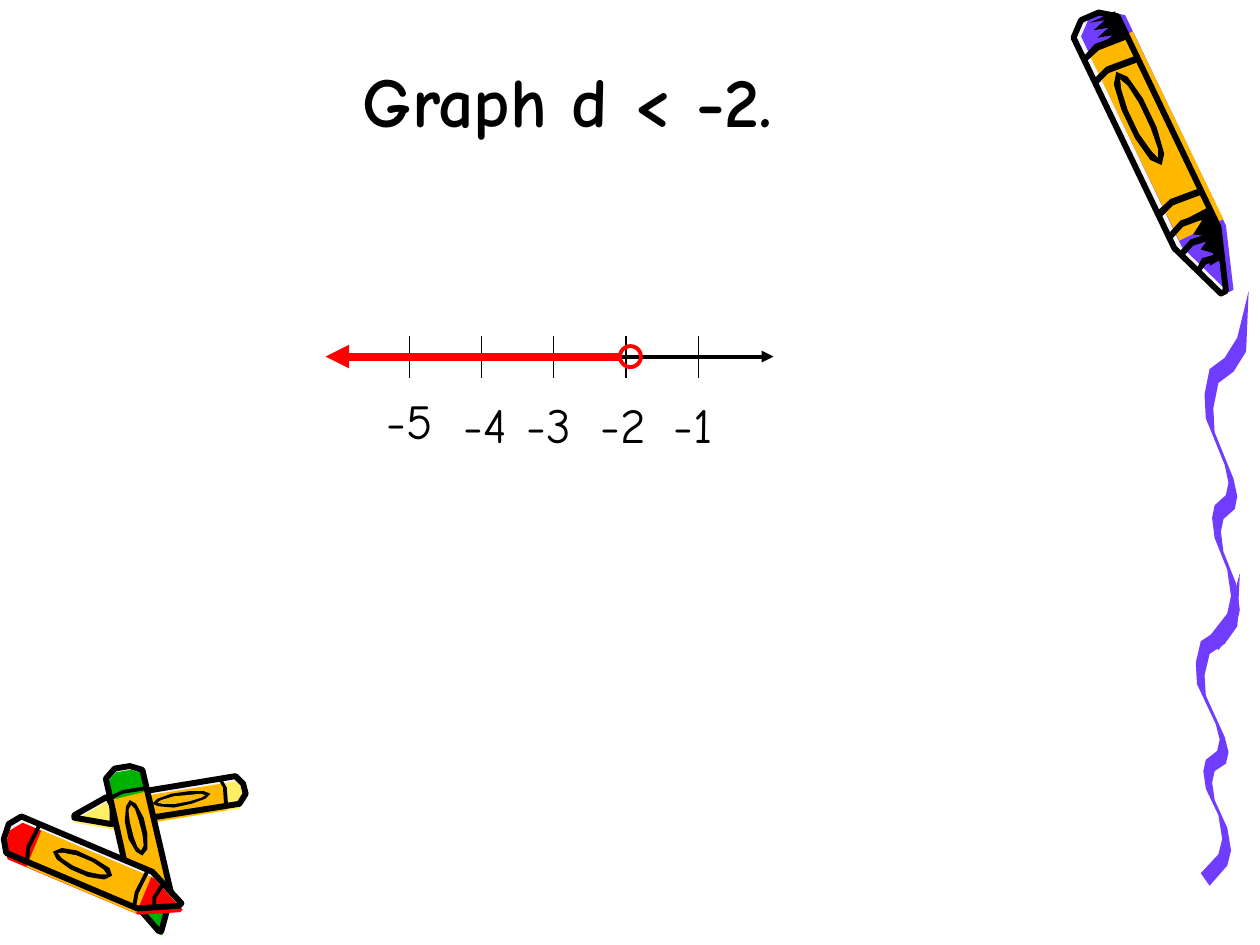
import dataclasses
import math
import pptx
import pptx.util
import pptx.dml.color
import pptx.enum.shapes
import pptx.enum.text
import pptx.oxml.ns

Pt = pptx.util.Pt
FONT = "Comic Neue"
DRAWING_UNIT = Pt(0.72)
AXIS_Y = 203.76
FIRST_TICK_X, TICK_GAP = 234, 41.25
SHOULDER = 0.8
COLORS = {
    "black": "000000", "purple": "703DFF", "orange": "FFB800", "paper": "F8F8F8",
    "yellow": "FFEF66", "red": "FF0000", "green": "00B200",
}
TICK_LABELS = [
    ("-5", 213.84, 219.6, 44), ("-4", 257.76, 221.76, 44), ("-3", 293.76, 221.76, 47),
    ("-2", 336.24, 221.76, 60), ("-1", 378, 221.76, 48),
]
SQUIGGLE_STROKE = [
    (4, 274), (18, 256), (21, 242), (18, 221), (8, 196), (6, 180), (8, 170), (17, 162),
    (19, 152), (16, 138), (1, 101), (0, 82), (4, 62), (16, 53), (26, 37), (35, 0),
]
SQUIGGLE_NIB = (7, 11)


@dataclasses.dataclass
class Crayon:
    color: str
    back: tuple
    tip: tuple
    width: float
    fill_shift: tuple
    wrapper_start: float
    bands: tuple
    ring_center: float = 0.37
    shading: tuple = ()

    def locate(self, points, shift=(0, 0)):
        run, rise = self.tip[0] - self.back[0], self.tip[1] - self.back[1]
        length = math.hypot(run, rise)
        placed = []
        for along, across in points:
            side = across * self.width / length
            placed.append((round(self.back[0] + along * run + side * rise + shift[0]),
                           round(self.back[1] + along * rise - side * run + shift[1])))
        return placed


CRAYONS = [
    Crayon("yellow", (194, 626), (59, 648), 22, (0, 4), 0.12, (0.12, 0.79)),
    Crayon("green", (97, 609), (127, 739), 30, (1, 3), 0.15, (0.15,)),
    Crayon("red", (5, 660), (143, 718), 31, (1, 5), 0.15, (0.15, 0.77, 0.87), ring_center=0.44),
    Crayon("purple", (865, 13), (971, 232), 39, (6, -1), 0.1, (0.11, 0.19, 0.67, 0.75, 0.82, 0.89),
           shading=((0.02, 0.1), (0.73, 0.9))),
]


def rgb(color):
    return pptx.dml.color.RGBColor.from_string(COLORS[color])


def style_text(frame, size, bold=False):
    for run in frame.paragraphs[0].runs:
        run.font.name = FONT
        run.font.size = Pt(size)
        run.font.bold = bold
        run.font.color.rgb = rgb("black")


def add_outline(slide, points, fill=None, stroke=0):
    builder = slide.shapes.build_freeform(*points[0], scale=DRAWING_UNIT)
    builder.add_line_segments(points[1:], close=True)
    outline = builder.convert_to_shape()
    outline.shadow.inherit = False
    if fill:
        outline.fill.solid()
        outline.fill.fore_color.rgb = rgb(fill)
    else:
        outline.fill.background()
    if stroke:
        outline.line.color.rgb = rgb("black")
        outline.line.width = Pt(stroke)
    else:
        outline.line.fill.background()


def half_width(along):
    return 0.5 * min(1, (1 - along) / (1 - SHOULDER))


def mirrored(half):
    return half + [(along, -across) for along, across in reversed(half)]


def band_shape(along, thickness=0.022):
    half = half_width(along)
    bow = [(along, -half), (along - 0.02, -0.3 * half), (along - 0.01, half)]
    return bow + [(place + thickness, across) for place, across in reversed(bow)]


def ring_shape(center, half_length, half_height):
    angles = [math.tau * step / 10 for step in range(10)]
    return [(center + half_length * math.cos(angle), half_height * math.sin(angle))
            for angle in angles]


def shading_shape(start, end, teeth=6):
    places = [start + (end - start) * step / teeth for step in range(teeth + 1)]
    edge = [(place, half_width(place)) for place in places]
    zigzag = [(place, half_width(place) * (0.5 if step % 2 else -0.1))
              for step, place in enumerate(places)]
    return edge + zigzag[::-1]


def add_crayon(slide, crayon):
    silhouette = mirrored([(0, 0.2), (0.04, 0.5), (SHOULDER, 0.5), (1, 0.05)])
    wrapper = mirrored([(crayon.wrapper_start, 0.5), (0.78, 0.5)])
    add_outline(slide, crayon.locate(silhouette), "paper")
    add_outline(slide, crayon.locate(silhouette, crayon.fill_shift), crayon.color)
    add_outline(slide, crayon.locate(wrapper, crayon.fill_shift), "orange")
    add_outline(slide, crayon.locate(silhouette), stroke=3.4)
    for along in crayon.bands:
        add_outline(slide, crayon.locate(band_shape(along)), "black")
    for start, end in crayon.shading:
        add_outline(slide, crayon.locate(shading_shape(start, end)), "black")
    add_outline(slide, crayon.locate(ring_shape(crayon.ring_center, 0.17, 0.26)), "black")
    add_outline(slide, crayon.locate(ring_shape(crayon.ring_center, 0.14, 0.13)), "orange")


def add_squiggle(slide, left, top, stretch):
    nib_x, nib_y = SQUIGGLE_NIB
    near_edge = SQUIGGLE_STROKE
    far_edge = [(x + nib_x, y + nib_y) for x, y in near_edge[-2::-1]]
    add_outline(slide, [(left + x, round(top + y * stretch)) for x, y in near_edge + far_edge],
                "purple")


def add_line(slide, start, end, color, width, arrows=()):
    line = slide.shapes.add_connector(
        pptx.enum.shapes.MSO_CONNECTOR.STRAIGHT, *map(Pt, start + end))
    line.line.color.rgb = rgb(color)
    line.line.width = Pt(width)
    qn = pptx.oxml.ns.qn
    properties = line._element.spPr
    stroke = properties.find(qn("a:ln"))
    for arrow in arrows:
        stroke.append(stroke.makeelement(qn(arrow), {"type": "triangle"}))
    properties.append(properties.makeelement(qn("a:effectLst"), {}))


def add_title(slide, wording):
    title = slide.shapes.title
    title.left, title.top, title.width, title.height = map(Pt, (54, 30.24, 540.72, 54))
    frame = title.text_frame
    frame.text = wording
    frame.word_wrap = True
    frame.auto_size = pptx.enum.text.MSO_AUTO_SIZE.NONE
    frame.vertical_anchor = pptx.enum.text.MSO_ANCHOR.BOTTOM
    frame.paragraphs[0].alignment = pptx.enum.text.PP_ALIGN.CENTER
    style_text(frame, 40, bold=True)


def add_tick_label(slide, wording, left, top, width):
    label = slide.shapes.add_textbox(*map(Pt, (left, top, width, 41)))
    label.text_frame.text = wording
    label.text_frame.word_wrap = True
    style_text(label.text_frame, 28)


def add_open_circle(slide, left, top, diameter):
    circle = slide.shapes.add_shape(
        pptx.enum.shapes.MSO_SHAPE.OVAL, *map(Pt, (left, top, diameter, diameter)))
    circle.shadow.inherit = False
    circle.fill.background()
    circle.line.color.rgb = rgb("red")
    circle.line.width = Pt(2.25)


def add_number_line(slide):
    add_line(slide, (190, AXIS_Y), (442, AXIS_Y), "black", 2.25, ("a:headEnd", "a:tailEnd"))
    for index, label in enumerate(TICK_LABELS):
        tick_x = FIRST_TICK_X + TICK_GAP * index
        add_line(slide, (tick_x, 192), (tick_x, 216), "black", 0.75)
        add_tick_label(slide, *label)
    add_open_circle(slide, 354.24, 197.76, 12)
    add_line(slide, (186, AXIS_Y), (354.24, AXIS_Y), "red", 4.5, ("a:headEnd",))


def main():
    deck = pptx.Presentation()
    deck.slide_width, deck.slide_height = Pt(720), Pt(540)
    slide = deck.slides.add_slide(deck.slide_layouts[5])
    add_squiggle(slide, left=949, top=455, stretch=0.87)
    add_squiggle(slide, left=956, top=231, stretch=1)
    for crayon in CRAYONS:
        add_crayon(slide, crayon)
    add_title(slide, "Graph d < -2.")
    add_number_line(slide)
    deck.save("out.pptx")


if __name__ == "__main__":
    main()
